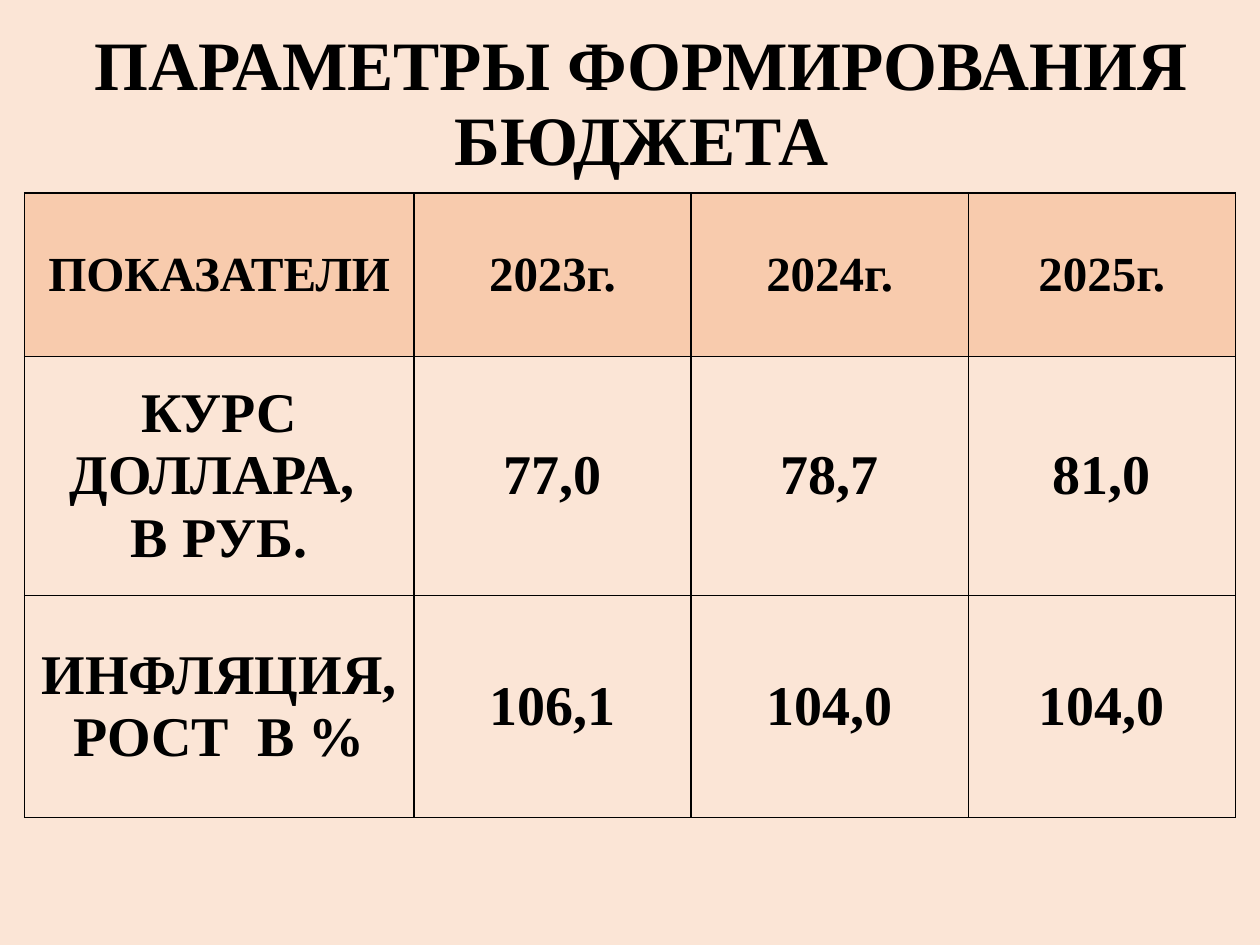
from lxml import etree
from pptx import Presentation
from pptx.dml.color import RGBColor
from pptx.enum import text as t
from pptx.oxml import ns
from pptx.util import Pt

FONT = "Times New Roman"
BLACK = RGBColor(0x00, 0x00, 0x00)
CREAM = RGBColor(0xFB, 0xE5, 0xD6)
PEACH = RGBColor(0xF8, 0xCB, 0xAD)

COLUMN_WIDTHS = (222.5, 158.4, 158.4, 152.7)
ROW_HEIGHTS = (93.4, 136.6, 127)
ROWS = (
    ("ПОКАЗАТЕЛИ", "2023г.", "2024г.", "2025г."),
    ("КУРС ДОЛЛАРА, \nВ РУБ.", "77,0", "78,7", "81,0"),
    ("ИНФЛЯЦИЯ,\nРОСТ  В %", "106,1", "104,0", "104,0"),
)


def write_text(frame, content, size, spacing=None):
    """Fill a text frame with bold centred text, one paragraph per line."""
    frame.word_wrap = True
    for index, line in enumerate(content.split("\n")):
        paragraph = frame.add_paragraph() if index else frame.paragraphs[0]
        paragraph.alignment = t.PP_ALIGN.CENTER
        if spacing:
            paragraph.line_spacing = spacing
        run = paragraph.add_run()
        run.text = line
        run.font.name = FONT
        run.font.size = Pt(size)
        run.font.bold = True
        run.font.color.rgb = BLACK


def set_borders(cell, color, width):
    properties = cell._tc.get_or_add_tcPr()
    for index, side in enumerate(("lnL", "lnR", "lnT", "lnB")):
        line = etree.Element(ns.qn(f"a:{side}"), w=str(Pt(width)))
        fill = etree.SubElement(line, ns.qn("a:solidFill"))
        etree.SubElement(fill, ns.qn("a:srgbClr"), val=str(color))
        properties.insert(index, line)


def add_title(slide, left, top, width, height):
    box = slide.shapes.add_textbox(Pt(left), Pt(top), Pt(width), Pt(height))
    box.text_frame.vertical_anchor = t.MSO_ANCHOR.MIDDLE
    write_text(box.text_frame, "ПАРАМЕТРЫ ФОРМИРОВАНИЯ БЮДЖЕТА", size=39.6, spacing=0.9)


def add_parameter_table(slide, left, top):
    frame = slide.shapes.add_table(
        len(ROWS), len(COLUMN_WIDTHS), Pt(left), Pt(top),
        Pt(sum(COLUMN_WIDTHS)), Pt(sum(ROW_HEIGHTS)))
    table = frame.table
    for column, width in zip(table.columns, COLUMN_WIDTHS):
        column.width = Pt(width)
    for row_index, (row, height) in enumerate(zip(table.rows, ROW_HEIGHTS)):
        row.height = Pt(height)
        is_header = row_index == 0
        for cell, content in zip(row.cells, ROWS[row_index]):
            cell.vertical_anchor = t.MSO_ANCHOR.MIDDLE
            cell.fill.solid()
            cell.fill.fore_color.rgb = PEACH if is_header else CREAM
            set_borders(cell, BLACK, width=1)
            write_text(cell.text_frame, content, size=28 if is_header else 32)


def main():
    presentation = Presentation()
    presentation.slide_width, presentation.slide_height = Pt(720), Pt(540)
    slide = presentation.slides.add_slide(presentation.slide_layouts[6])
    slide.background.fill.solid()
    slide.background.fill.fore_color.rgb = CREAM
    add_title(slide, left=42.5, top=9.4, width=648, height=101.5)
    add_parameter_table(slide, left=14, top=110.3)
    presentation.save("out.pptx")


if __name__ == "__main__":
    main()
